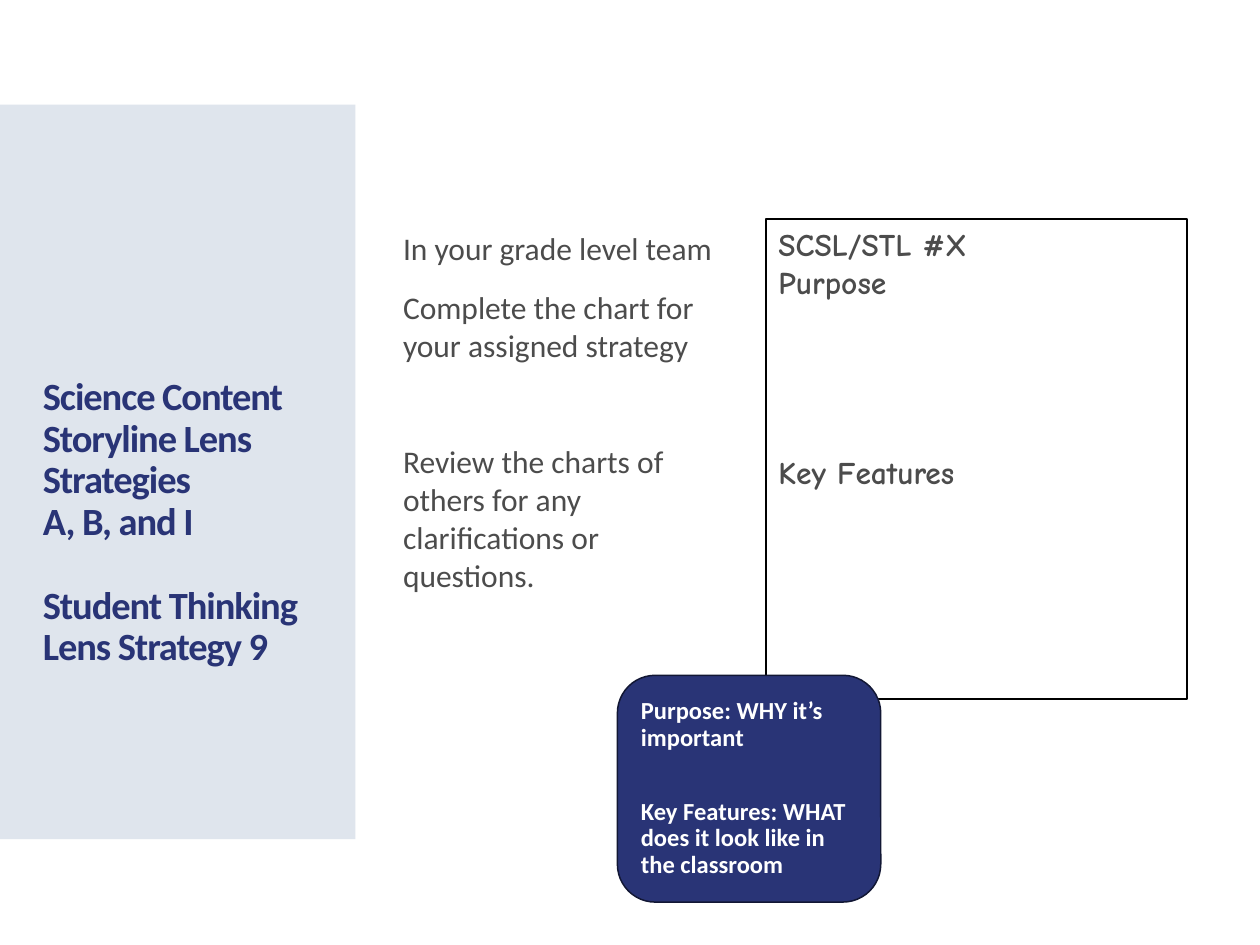
from pptx import Presentation
from pptx.dml.color import RGBColor
from pptx.enum import shapes, text
from pptx.util import Inches, Pt

THEME = {
    "panel": "DFE5ED", "navy": "293476", "navy_edge": "121734",
    "grey": "4C4C4C", "black": "000000", "white": "FFFFFF",
    "font": "Calibri", "chart_font": "Comic Neue",
    "title": 22, "body": 18, "callout": 14,
}

# Paragraphs are (text, space before in points); \v is a line break.
TITLE = [("Science Content Storyline Lens Strategies \vA, B, and I", 0),
         ("Student Thinking Lens Strategy 9", 24)]
CHART = [("SCSL/STL #X", 0), ("Purpose", 0), ("Key Features", 87)]
CALLOUT = [("Purpose: WHY it’s important", 0),
           ("Key Features: WHAT does it look like in the classroom", 27)]
STEPS = [("In your grade level team", 0),
         ("Complete the chart for your assigned strategy", 12),
         ("Review the charts of others for any clarifications or questions.", 45)]

BOXES = {
    "panel": (0, 0.83, 2.82, 5.83),
    "title": (0.24, 1.74, 2.33, 3.62),
    "chart": (6.08, 1.74, 3.34, 3.81),
    "callout": (4.9, 5.36, 2.09, 1.8),
    "steps": (3.1, 0.88, 2.85, 4.77),
}


def box(name):
    return [Inches(length) for length in BOXES[name]]


def color(name):
    return RGBColor.from_string(THEME[name])


def write(shape, content, size, ink, anchor, font="font", bold=False, spacing=1.0):
    frame = shape.text_frame
    frame.word_wrap = True
    frame.auto_size = text.MSO_AUTO_SIZE.NONE
    frame.vertical_anchor = anchor
    for index, (words, before) in enumerate(content):
        paragraph = frame.add_paragraph() if index else frame.paragraphs[0]
        paragraph.text = words
        paragraph.alignment = text.PP_ALIGN.LEFT
        paragraph.line_spacing = spacing
        paragraph.space_before = Pt(before)
        paragraph.space_after = Pt(0)
        paragraph.font.name = THEME[font]
        paragraph.font.size = Pt(THEME[size])
        paragraph.font.bold = bold
        paragraph.font.color.rgb = color(ink)


def add_block(slide, name, kind, fill=None, line=None, width=0):
    shape = slide.shapes.add_shape(kind, *box(name))
    shape.shadow.inherit = False
    for part, paint in ((shape.fill, fill), (shape.line.fill, line)):
        if paint:
            part.solid()
            part.fore_color.rgb = color(paint)
        else:
            part.background()
    if line:
        shape.line.width = Pt(width)
    return shape


def tighten(shape, points):
    """Set the letter spacing of every run."""
    for paragraph in shape.text_frame.paragraphs:
        for run in paragraph.runs:
            run.font._element.set("spc", str(int(points * 100)))


def main():
    presentation = Presentation()
    presentation.slide_width, presentation.slide_height = Inches(10), Inches(7.5)
    slide = presentation.slides.add_slide(presentation.slide_layouts[5])
    kinds, anchors = shapes.MSO_SHAPE, text.MSO_ANCHOR

    panel = add_block(slide, "panel", kinds.RECTANGLE, "panel")
    title = slide.shapes.title
    title.left, title.top, title.width, title.height = box("title")
    panel._element.addnext(title._element)  # the title lies over the panel
    write(title, TITLE, "title", "navy", anchors.BOTTOM, bold=True, spacing=0.9)
    tighten(title, -0.6)

    chart = add_block(slide, "chart", kinds.RECTANGLE, None, "black", 1.25)
    write(chart, CHART, "body", "grey", anchors.TOP, "chart_font", bold=True)

    callout = add_block(slide, "callout", kinds.ROUNDED_RECTANGLE,
                        "navy", "navy_edge", 0.85)
    write(callout, CALLOUT, "callout", "white", anchors.MIDDLE, bold=True, spacing=0.9)

    steps = slide.shapes.add_textbox(*box("steps"))
    write(steps, STEPS, "body", "grey", anchors.MIDDLE)

    presentation.save("out.pptx")


if __name__ == "__main__":
    main()
